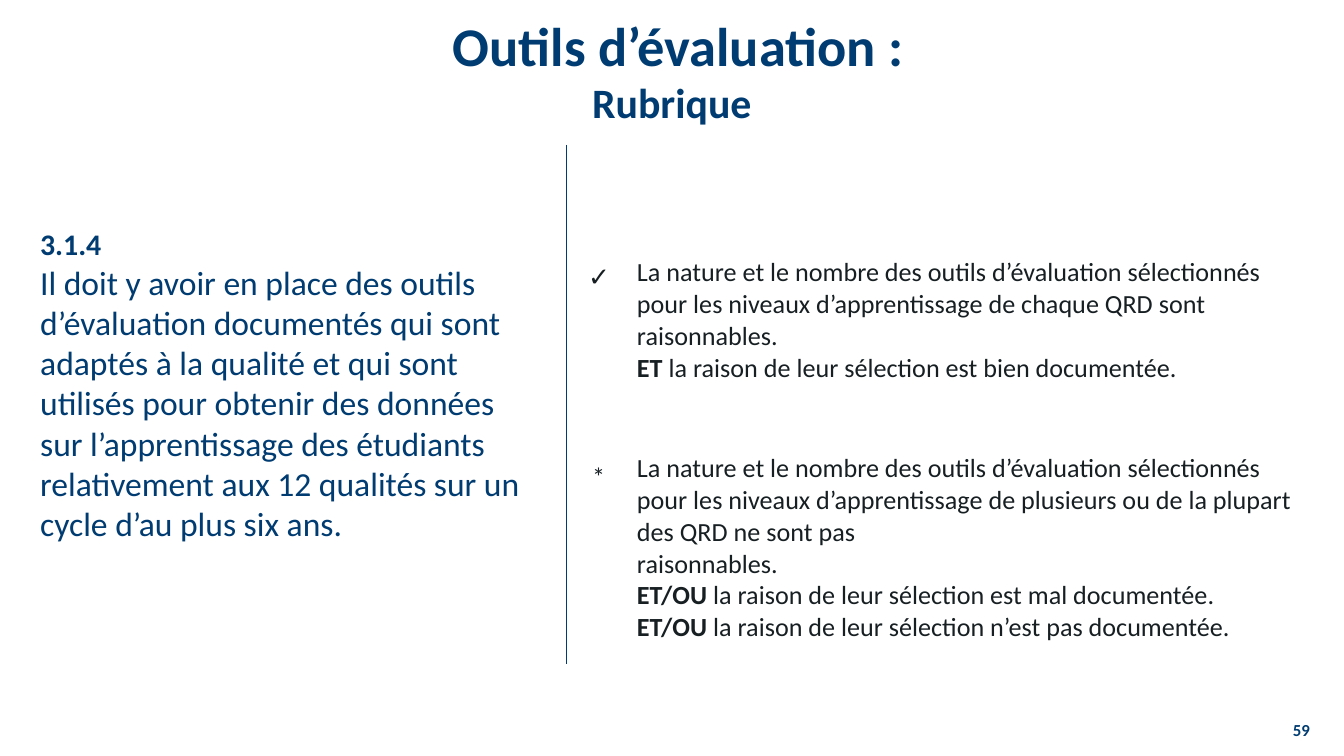
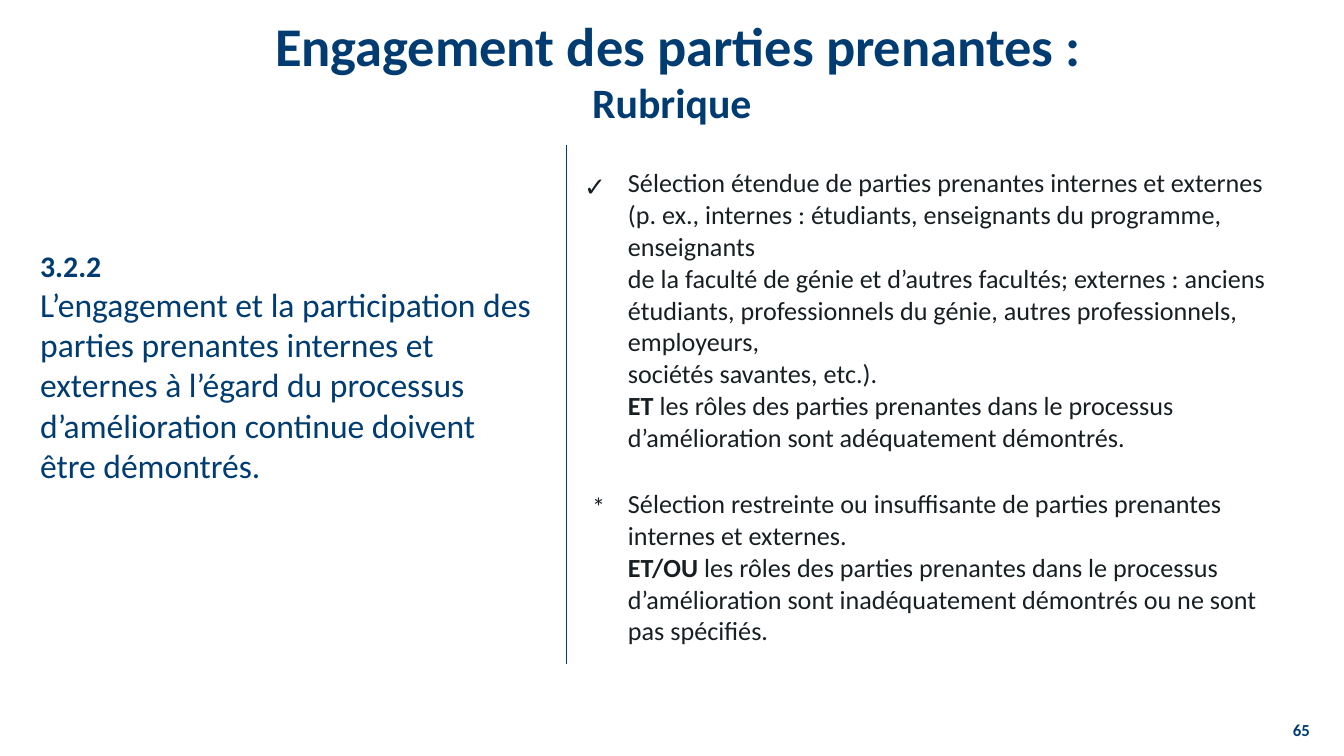
import pptx
import pptx.dml.color
import pptx.enum.shapes
import pptx.enum.text
import pptx.oxml.ns
import pptx.util
from lxml import etree

SCALE = 914400 / 134.4
WIDE, HIGH = 1344, 756
NAVY, INK = "003C71", "171F23"
FONT = "Calibri"
ALIGN = pptx.enum.text.PP_ALIGN
ANCHOR = pptx.enum.text.MSO_ANCHOR

# Each criterion line is a pair: bold lead, plain rest.
TOOLS = {
    "title": "Outils d’évaluation :",
    "page": "59",
    "left": (219, 335),
    "clause": [
        "3.1.4",
        "Il doit y avoir en place des outils d’évaluation documentés qui sont "
        "adaptés à la qualité et qui sont utilisés pour obtenir des données sur "
        "l’apprentissage des étudiants relativement aux 12 qualités sur un cycle "
        "d’au plus six ans.",
    ],
    "grid": (630, 672, 7),
    "rows": [120, 196, 203],
    "check": (575, 254),
    "star": (579, 454),
    "good": [
        ("", "La nature et le nombre des outils d’évaluation sélectionnés pour les "
             "niveaux d’apprentissage de chaque QRD sont raisonnables."),
        ("ET", " la raison de leur sélection est bien documentée."),
    ],
    "poor": [
        ("", "La nature et le nombre des outils d’évaluation sélectionnés pour les "
             "niveaux d’apprentissage de plusieurs ou de la plupart des QRD ne sont pas"),
        ("", "raisonnables."),
        ("ET/OU", " la raison de leur sélection est mal documentée."),
        ("ET/OU", " la raison de leur sélection n’est pas documentée."),
    ],
}

PARTIES = {
    "title": "Engagement des parties prenantes :",
    "page": "65",
    "left": (241, 253),
    "clause": [
        "3.2.2",
        "L’engagement et la participation des parties prenantes internes et "
        "externes à l’égard du processus d’amélioration continue doivent",
        "être démontrés.",
    ],
    "grid": (620, 677, 8),
    "rows": [31, 321, 230],
    "check": (571, 164),
    "star": (579, 484),
    "good": [
        ("", "Sélection étendue de parties prenantes internes et externes (p. ex., "
             "internes : étudiants, enseignants du programme, enseignants"),
        ("", "de la faculté de génie et d’autres facultés; externes : anciens étudiants, "
             "professionnels du génie, autres professionnels, employeurs,"),
        ("", "sociétés savantes, etc.)."),
        ("ET", " les rôles des parties prenantes dans le processus d’amélioration "
               "sont adéquatement démontrés."),
    ],
    "poor": [
        ("", "Sélection restreinte ou insuffisante de parties prenantes internes et externes."),
        ("ET/OU", " les rôles des parties prenantes dans le processus d’amélioration "
                  "sont inadéquatement démontrés ou ne sont pas spécifiés."),
    ],
}


def px(count):
    return pptx.util.Emu(round(count * SCALE))


def shade(code):
    return pptx.dml.color.RGBColor.from_string(code)


def style(run, size, tint, bold=False):
    font = run.font
    font.name, font.size, font.bold = FONT, pptx.util.Pt(size), bold
    font.color.rgb = shade(tint)


def add_text(slide, box, text, wrap=True, anchor=ANCHOR.TOP):
    frame = slide.shapes.add_textbox(*map(px, box)).text_frame
    frame.word_wrap = wrap
    frame.vertical_anchor = anchor
    frame.text = text
    return frame


def add_title(slide, text):
    frame = add_text(slide, (67, 8, 1210, 126), f" {text}\vRubrique", anchor=ANCHOR.BOTTOM)
    line = frame.paragraphs[0]
    line.alignment = ALIGN.CENTER
    for run, size in zip(line.runs, (29.2, 22.4)):
        style(run, size, NAVY, True)


def add_clause(slide, top, height, lines):
    frame = add_text(slide, (27, top, 530, height), "\n".join(lines))
    for order, line in enumerate(frame.paragraphs):
        style(line.runs[0], 18 if order else 16, NAVY, order == 0)


def add_rule(slide):
    kind = pptx.enum.shapes.MSO_CONNECTOR.STRAIGHT
    rule = slide.shapes.add_connector(kind, px(567), px(145), px(567), px(664))
    rule.line.color.rgb = shade(NAVY)
    rule.line.width = pptx.util.Pt(0.5)
    etree.SubElement(rule._element.spPr, pptx.oxml.ns.qn("a:effectLst"))


def fill_cell(cell, lines):
    frame = cell.text_frame
    frame.text = "\n".join(lead or rest for lead, rest in lines)
    for line, (lead, rest) in zip(frame.paragraphs, lines):
        style(line.runs[0], 14, INK, bool(lead))
        if lead:
            run = line.add_run()
            run.text = rest
            style(run, 14, INK)


def add_grid(slide, left, width, inset, rows, blocks):
    """Add the criteria table, with an empty row above the blocks."""
    table = slide.shapes.add_table(
        len(rows), 1, px(left), px(133), px(width), px(sum(rows))).table
    table.first_row = table.horz_banding = False
    for row, height in zip(table.rows, rows):
        row.height = px(height)
        cell = row.cells[0]
        cell.fill.background()
        cell.margin_left = cell.margin_right = px(inset)
        cell.margin_top = cell.margin_bottom = px(4)
    blank = table.cell(0, 0).text_frame.paragraphs[0]
    etree.SubElement(blank._p, pptx.oxml.ns.qn("a:endParaRPr"), sz="600")
    for order, lines in enumerate(blocks, 1):
        fill_cell(table.cell(order, 0), lines)


def add_mark(slide, place, width, sign, bold):
    frame = add_text(slide, (*place, width, 46), sign, wrap=False)
    style(frame.paragraphs[0].runs[0], 14, INK, bold)


def add_page(slide, number):
    frame = add_text(slide, (1275, 719, 48, 22), number, anchor=ANCHOR.MIDDLE)
    frame.margin_top = frame.margin_bottom = 0
    line = frame.paragraphs[0]
    line.alignment = ALIGN.RIGHT
    style(line.runs[0], 9, NAVY, True)


def add_rubric(deck, topic):
    slide = deck.slides.add_slide(deck.slide_layouts[6])
    slide.background.fill.solid()
    slide.background.fill.fore_color.rgb = shade("FFFFFF")
    add_title(slide, topic["title"])
    add_clause(slide, *topic["left"], topic["clause"])
    add_rule(slide)
    add_grid(slide, *topic["grid"], topic["rows"], (topic["good"], topic["poor"]))
    add_mark(slide, topic["check"], 47, "✓", True)
    add_mark(slide, topic["star"], 38, "*", False)
    add_page(slide, topic["page"])


def main():
    deck = pptx.Presentation()
    deck.slide_width, deck.slide_height = px(WIDE), px(HIGH)
    for topic in (TOOLS, PARTIES):
        add_rubric(deck, topic)
    deck.save("out.pptx")


if __name__ == "__main__":
    main()
